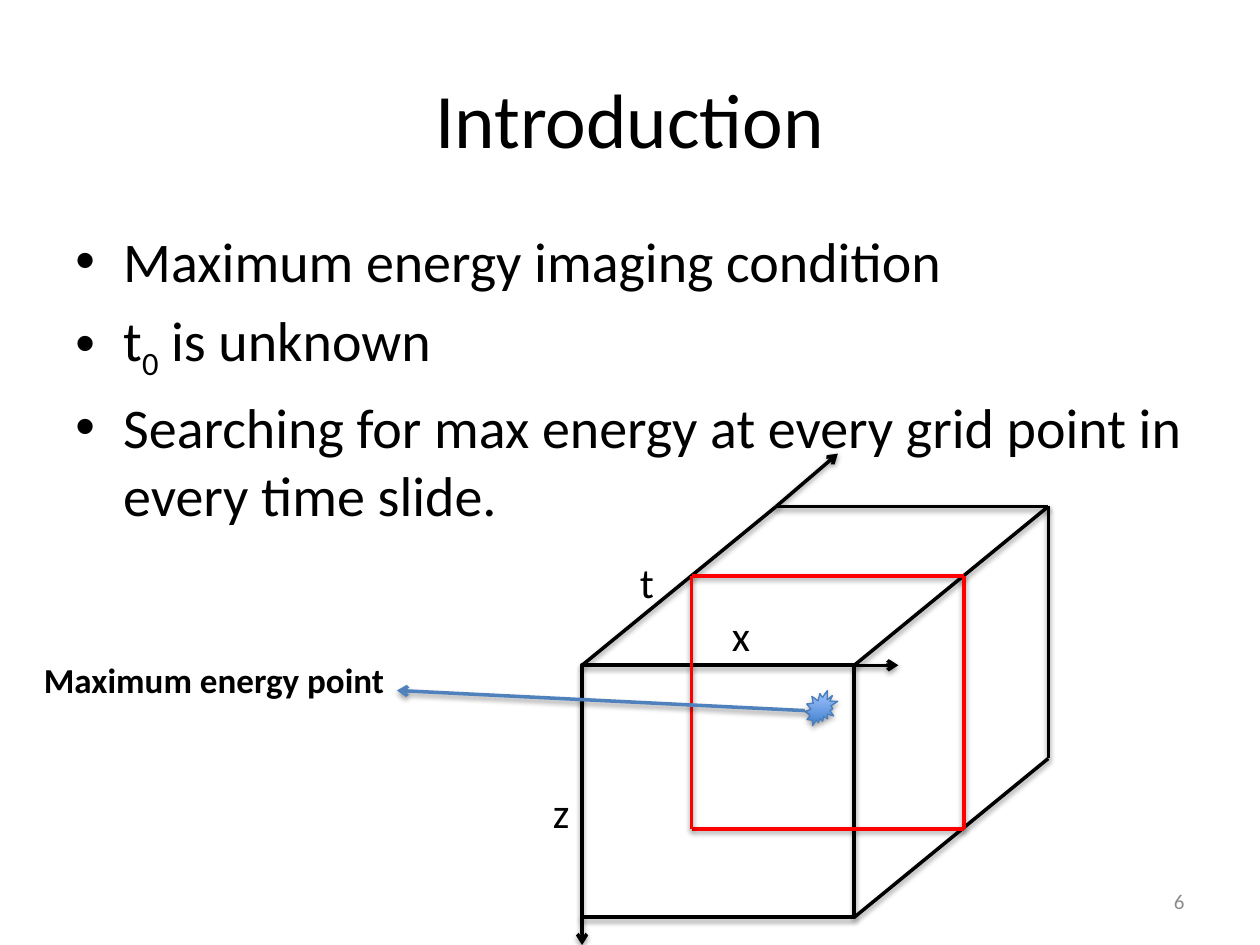
from dataclasses import dataclass

from lxml import etree
from pptx import Presentation
from pptx import util as u
from pptx.dml.color import RGBColor
from pptx.enum import shapes, text
from pptx.oxml import ns


@dataclass(frozen=True)
class Theme:
    font: str = "Calibri"
    ink: str = "000000"
    slice: str = "FF0000"
    pointer: str = "4F81BD"
    burst_edge: str = "4B7EBC"
    burst_dark: str = "3F80CE"
    burst_light: str = "A4C4FF"
    muted: str = "8C8C8C"
    title: int = 44
    body: int = 32
    axis: int = 24
    callout: int = 20
    footer: int = 12
    stroke: float = 2
    front_stroke: float = 2.25
    burst_stroke: float = 0.75


THEME = Theme()


def rgb(value):
    return RGBColor.from_string(value)


def add_child(parent, tag, **attributes):
    return etree.SubElement(parent, ns.qn(tag), {k: str(v) for k, v in attributes.items()})


def cast_shadow(part, distance, opacity):
    part.shadow.inherit = False
    effects = part._element.spPr.find(ns.qn("a:effectLst"))
    shadow = add_child(effects, "a:outerShdw", blurRad=u.Pt(3.1), dist=u.Pt(distance),
                       dir=90 * 60000, rotWithShape=0)
    tint = add_child(shadow, "a:srgbClr", val=THEME.ink)
    add_child(tint, "a:alpha", val=opacity * 1000)


def add_text(slide, box, size, lines, color=THEME.ink, bold=False, wrap=True,
             align=text.PP_ALIGN.LEFT, anchor=text.MSO_ANCHOR.TOP):
    frame = slide.shapes.add_textbox(*map(u.Inches, box)).text_frame
    frame.word_wrap = wrap
    frame.vertical_anchor = anchor
    for index, line in enumerate(lines):
        paragraph = frame.paragraphs[0] if index == 0 else frame.add_paragraph()
        paragraph.alignment = align
        font = paragraph.font
        font.name, font.size, font.bold = THEME.font, u.Pt(size), bold
        font.color.rgb = rgb(color)
        for words, baseline in line:
            run = paragraph.add_run()
            run.text = words
            if baseline:
                run._r.get_or_add_rPr().set("baseline", str(baseline * 1000))
    return frame


def add_line(slide, start, end, color=THEME.ink, arrow=False):
    ends = map(u.Inches, (*start, *end))
    line = slide.shapes.add_connector(shapes.MSO_CONNECTOR.STRAIGHT, *ends)
    line.line.color.rgb = rgb(color)
    line.line.width = u.Pt(THEME.stroke)
    if arrow:
        add_child(line.line._get_or_add_ln(), "a:tailEnd", type="arrow")
    effects = add_child(line._element.spPr, "a:effectLst")
    shadow = add_child(effects, "a:outerShdw", blurRad=u.Pt(3.1), dist=u.Pt(1.6),
                       dir=90 * 60000, rotWithShape=0)
    add_child(add_child(shadow, "a:srgbClr", val=THEME.ink), "a:alpha", val=38000)


def add_title(slide, box):
    add_text(slide, box, THEME.title, [[("Introduction", 0)]],
             align=text.PP_ALIGN.CENTER, anchor=text.MSO_ANCHOR.MIDDLE)


def add_bullets(slide, box):
    points = [
        [("Maximum energy imaging condition", 0)],
        [("t", 0), ("0", -25), (" is unknown", 0)],
        [("Searching for max energy at every grid point in every time slide.", 0)],
    ]
    for paragraph in add_text(slide, box, THEME.body, points).paragraphs:
        paragraph.space_before = u.Pt(THEME.body * 0.2)
        properties = paragraph._p.get_or_add_pPr()
        properties.set("marL", str(u.Inches(0.38)))
        properties.set("indent", str(u.Inches(-0.38)))
        bullet_font = properties.makeelement(ns.qn("a:buFont"), {"typeface": "Arial"})
        bullet = properties.makeelement(ns.qn("a:buChar"), {"char": "•"})
        defaults = properties.find(ns.qn("a:defRPr"))
        defaults.addprevious(bullet_font)
        defaults.addprevious(bullet)


def add_cube(slide, box, depth):
    left, top, width, height = box
    right, bottom = left + width, top + height
    dx, dy = depth

    def back(x, y):
        return x + dx, y - dy

    front = slide.shapes.add_shape(shapes.MSO_SHAPE.RECTANGLE, *map(u.Inches, box))
    front.fill.background()
    front.line.color.rgb = rgb(THEME.ink)
    front.line.width = u.Pt(THEME.front_stroke)
    cast_shadow(front, 1.8, 35)

    for corner in ((left, top), (right, top), (right, bottom)):
        add_line(slide, corner, back(*corner))
    add_line(slide, back(left, top), back(right, top))
    add_line(slide, back(right, top), back(right, bottom))

    far_x, far_y = back(left, top)
    add_line(slide, (far_x, far_y), (far_x + 0.49, far_y - 0.42), arrow=True)
    add_line(slide, (right, top), (right + 0.35, top), arrow=True)
    add_line(slide, (left, bottom), (left, bottom + 0.22), arrow=True)

    for name, x, y, label_width in (("t", 0.36, -0.91, 0.31),
                                    ("x", 1.09, -0.49, 0.35),
                                    ("z", -0.33, 0.91, 0.33)):
        add_text(slide, (left + x, top + y, label_width, 0.5), THEME.axis,
                 [[(name, 0)]], wrap=False)


def add_time_slice(slide, box):
    left, top, width, height = box
    right, bottom = left + width, top + height
    corners = [(left, top), (right, top), (right, bottom), (left, bottom)]
    for start, end in zip(corners, corners[1:] + corners[:1]):
        add_line(slide, start, end, THEME.slice)


def add_energy_point(slide, box, label_box):
    left, top, _, _ = box
    burst = slide.shapes.add_shape(shapes.MSO_SHAPE.EXPLOSION2, *map(u.Inches, box))
    burst.fill.gradient()
    burst.fill.gradient_angle = 90
    for stop, color in zip(burst.fill.gradient_stops, (THEME.burst_dark, THEME.burst_light)):
        stop.color.rgb = rgb(color)
    burst.line.color.rgb = rgb(THEME.burst_edge)
    burst.line.width = u.Pt(THEME.burst_stroke)
    cast_shadow(burst, 1.8, 35)
    add_line(slide, (left, top + 0.16), (3.15, top), THEME.pointer, arrow=True)
    add_text(slide, label_box, THEME.callout, [[("Maximum energy point", 0)]], bold=True)


def add_page_number(slide, box):
    add_text(slide, box, THEME.footer, [[("6", 0)]], THEME.muted,
             align=text.PP_ALIGN.RIGHT, anchor=text.MSO_ANCHOR.MIDDLE)


def main():
    deck = Presentation()
    deck.slide_width, deck.slide_height = u.Inches(10), u.Inches(7.5)
    slide = deck.slides.add_slide(deck.slide_layouts[6])
    add_bullets(slide, (0.5, 1.75, 9, 4.95))
    add_cube(slide, (4.62, 5.28, 2.16, 2), (1.54, 1.26))
    add_page_number(slide, (7.17, 6.95, 2.33, 0.4))
    add_title(slide, (0.5, 0.31, 9, 1.25))
    add_time_slice(slide, (5.49, 4.57, 2.16, 2.01))
    add_energy_point(slide, (6.39, 5.48, 0.26, 0.28), (0.25, 5.18, 3.06, 0.44))
    deck.save("out.pptx")


if __name__ == "__main__":
    main()
